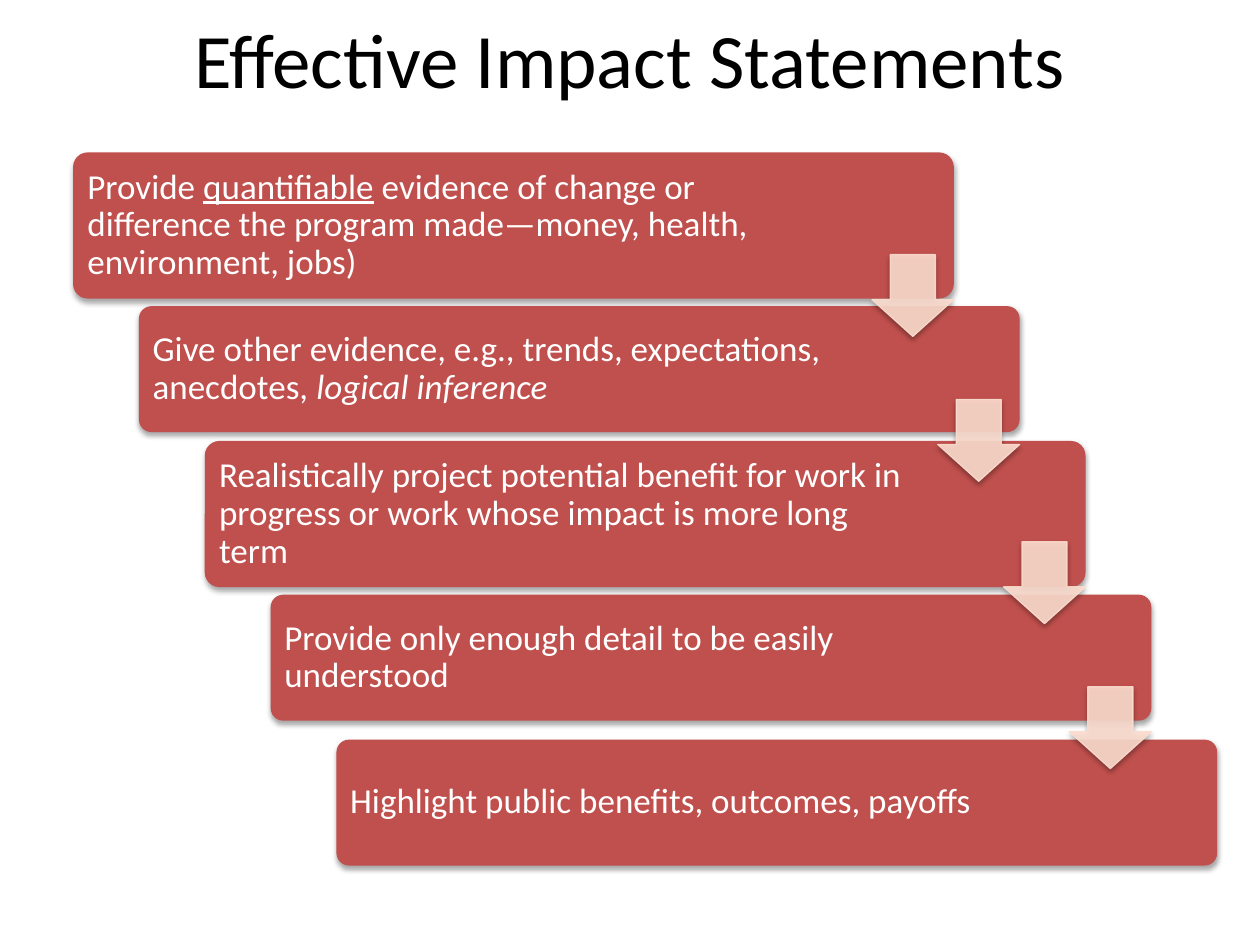
from dataclasses import dataclass

from lxml import etree
from pptx import Presentation
from pptx.dml.color import RGBColor
from pptx.enum.shapes import MSO_SHAPE
from pptx.enum.text import MSO_ANCHOR, PP_ALIGN
from pptx.oxml.ns import qn
from pptx.util import Inches, Pt

ROUNDED = MSO_SHAPE.ROUNDED_RECTANGLE
DOWN_ARROW = MSO_SHAPE.DOWN_ARROW
MIDDLE = MSO_ANCHOR.MIDDLE
LEFT, CENTER = PP_ALIGN.LEFT, PP_ALIGN.CENTER

RED = RGBColor(0xC0, 0x50, 0x4D)
PEACH = RGBColor(0xFC, 0xDD, 0xCF)
WHITE = RGBColor(0xFF, 0xFF, 0xFF)
BLACK = RGBColor(0x00, 0x00, 0x00)
FONT = "Calibri"

FIRST_LEFT = 0.58
INDENT = 0.5225
STEP_WIDTH = 6.99
ARROW_SIZE = 0.65
INSET = 0.08
RIGHT_INSET = 1.25


@dataclass
class Phrase:
    text: str
    underline: bool = False
    italic: bool = False


@dataclass
class Step:
    top: float
    height: float
    phrases: list[Phrase]


STEPS = [
    Step(1.21, 1.16, [
        Phrase("Provide "),
        Phrase("quantifiable", underline=True),
        Phrase(" evidence of change or difference the program made—money, "
               "health, environment, jobs)"),
    ]),
    Step(2.43, 1, [
        Phrase("Give other evidence, e.g., trends, expectations, anecdotes, "),
        Phrase("logical inference", italic=True),
    ]),
    Step(3.5, 1.16, [
        Phrase("Realistically project potential benefit for work in progress "
               "or work whose impact is more long term"),
    ]),
    Step(4.72, 1, [
        Phrase("Provide only enough detail to be easily understood"),
    ]),
    Step(5.87, 1, [Phrase("Highlight public benefits, outcomes, payoffs")]),
]
ARROW_TOPS = [2.02, 3.17, 4.3, 5.45]


def add_alpha(color, percent: int) -> None:
    etree.SubElement(color, qn("a:alpha"), val=str(percent * 1000))


def add_shadow(shape) -> None:
    shape.shadow.inherit = False
    effects = shape.element.spPr.find(qn("a:effectLst"))
    shadow = etree.SubElement(
        effects, qn("a:outerShdw"), blurRad=str(Pt(3.1)), dist=str(Pt(1.8)),
        dir="5400000", rotWithShape="0")
    color = etree.SubElement(shadow, qn("a:srgbClr"), val=str(BLACK))
    add_alpha(color, 35)


def step_left(index: int) -> float:
    return FIRST_LEFT + index * INDENT


def draw_step(slide, index: int, step: Step) -> None:
    box = slide.shapes.add_shape(
        ROUNDED, Inches(step_left(index)), Inches(step.top),
        Inches(STEP_WIDTH), Inches(step.height))
    box.adjustments[0] = 0.1
    box.fill.solid()
    box.fill.fore_color.rgb = RED
    box.line.fill.background()
    add_shadow(box)

    frame = box.text_frame
    frame.word_wrap = True
    frame.vertical_anchor = MIDDLE
    frame.margin_left = frame.margin_top = frame.margin_bottom = Inches(INSET)
    frame.margin_right = Inches(RIGHT_INSET)
    statement = frame.paragraphs[0]
    statement.alignment = LEFT
    statement.line_spacing = 0.9
    statement.font.name = FONT
    statement.font.size = Pt(20)
    statement.font.color.rgb = WHITE
    for phrase in step.phrases:
        run = statement.add_run()
        run.text = phrase.text
        if phrase.underline:
            run.font.underline = True
        if phrase.italic:
            run.font.italic = True


def draw_arrow(slide, index: int, top: float) -> None:
    left = step_left(index) + STEP_WIDTH - ARROW_SIZE
    arrow = slide.shapes.add_shape(
        DOWN_ARROW, Inches(left), Inches(top),
        Inches(ARROW_SIZE), Inches(ARROW_SIZE))
    arrow.adjustments[0] = 0.55
    arrow.adjustments[1] = 0.45
    arrow.line.width = Pt(0.75)
    for paint in (arrow.fill, arrow.line.fill):
        paint.solid()
        paint.fore_color.rgb = PEACH
    for color in arrow.element.spPr.iter(qn("a:srgbClr")):
        add_alpha(color, 90)
    add_shadow(arrow)


def draw_title(slide, text: str) -> None:
    title = slide.shapes.title
    title.left, title.top = Inches(0.75), Inches(-0.17)
    title.width, title.height = Inches(8.5), Inches(1.25)
    title.text_frame.text = text
    title.text_frame.vertical_anchor = MIDDLE
    heading = title.text_frame.paragraphs[0]
    heading.alignment = CENTER
    heading.font.name = FONT
    heading.font.size = Pt(44)
    heading.font.color.rgb = BLACK


def main() -> None:
    deck = Presentation()
    deck.slide_width, deck.slide_height = Inches(10), Inches(7.5)
    slide = deck.slides.add_slide(deck.slide_layouts[5])
    draw_title(slide, "Effective Impact Statements")
    for index, step in enumerate(STEPS):
        draw_step(slide, index, step)
    for index, top in enumerate(ARROW_TOPS):
        draw_arrow(slide, index, top)
    deck.save("out.pptx")


if __name__ == "__main__":
    main()
